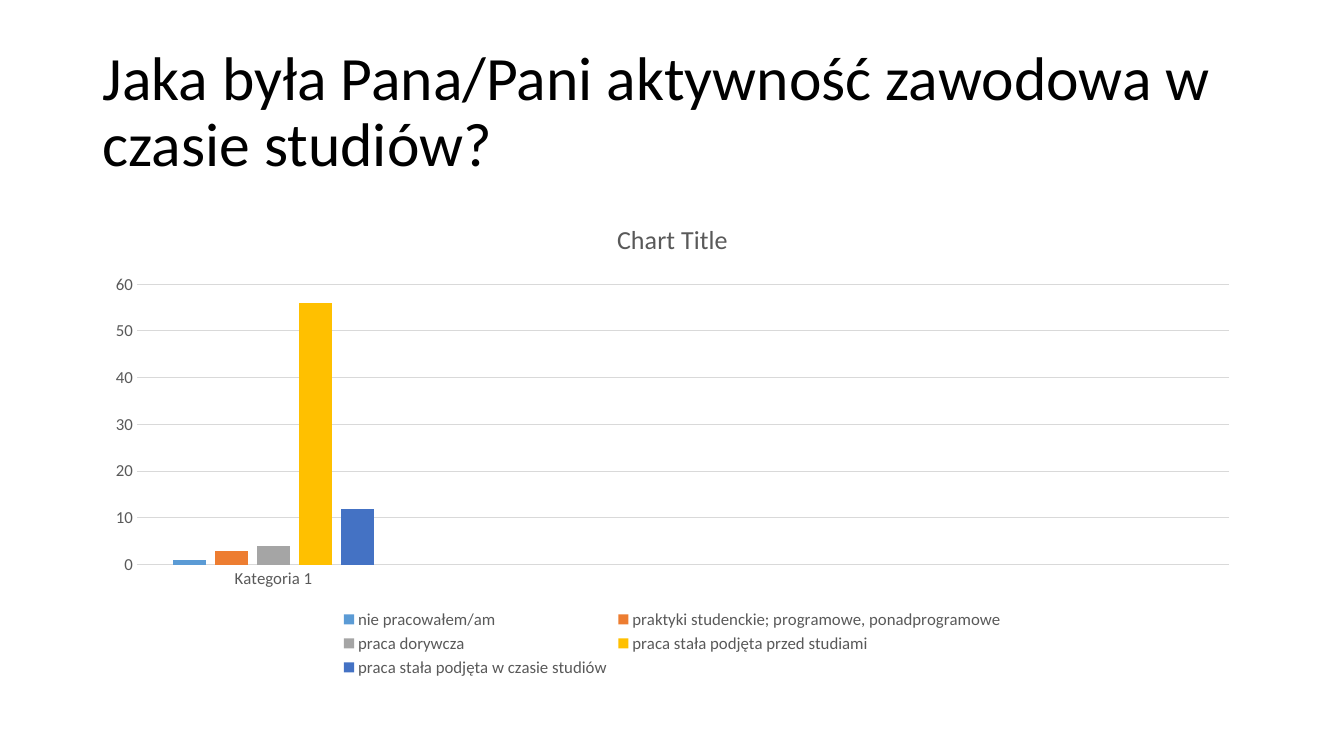
from pptx import Presentation
from pptx.chart.data import CategoryChartData
from pptx.dml.color import RGBColor
from pptx.enum import chart as charts, text
from pptx.util import Inches, Pt

FONT = "Calibri"
GREY, RULE = "595959", "D9D9D9"
CATEGORIES = ["Kategoria 1", "", "", ""]
ANSWERS = [
    ("nie pracowałem/am", 1, "5B9BD5"),
    ("praktyki studenckie; programowe, ponadprogramowe", 3, "ED7D31"),
    ("praca dorywcza", 4, "A5A5A5"),
    ("praca stała podjęta przed studiami", 56, "FFC000"),
    ("praca stała podjęta w czasie studiów", 12, "4472C4"),
]


def color(hex_string):
    return RGBColor.from_string(hex_string)


def style(font, size, hex_string):
    font.name = FONT
    font.size = Pt(size)
    font.bold = False
    font.color.rgb = color(hex_string)


def rule(line):
    line.color.rgb = color(RULE)
    line.width = Pt(0.75)


def add_question(slide, left, top, width, height):
    question = slide.shapes.add_textbox(
        Inches(left), Inches(top), Inches(width), Inches(height))
    frame = question.text_frame
    frame.word_wrap = True
    frame.vertical_anchor = text.MSO_ANCHOR.MIDDLE
    frame.text = "Jaka była Pana/Pani aktywność zawodowa w czasie studiów?"
    paragraph = frame.paragraphs[0]
    paragraph.line_spacing = 0.9
    style(paragraph.runs[0].font, 44, "000000")


def add_answers(slide, left, top, width, height):
    data = CategoryChartData()
    data.categories = CATEGORIES
    for name, count, _ in ANSWERS:
        data.add_series(name, [count] + [None] * (len(CATEGORIES) - 1))
    chart = slide.shapes.add_chart(
        charts.XL_CHART_TYPE.COLUMN_CLUSTERED,
        Inches(left), Inches(top), Inches(width), Inches(height), data).chart
    style(chart.font, 10, "000000")

    chart.has_title = True
    heading = chart.chart_title.text_frame
    heading.text = "Chart Title"
    style(heading.paragraphs[0].runs[0].font, 18.6, GREY)
    chart.chart_title.include_in_layout = False

    columns = chart.plots[0]
    columns.vary_by_categories = False
    columns.gap_width = 219
    columns.overlap = -27
    for series, (_, _, fill) in zip(columns.series, ANSWERS):
        series.format.fill.solid()
        series.format.fill.fore_color.rgb = color(fill)
        series.invert_if_negative = False

    for axis in (chart.category_axis, chart.value_axis):
        axis.major_tick_mark = charts.XL_TICK_MARK.NONE
        axis.minor_tick_mark = charts.XL_TICK_MARK.NONE
        style(axis.tick_labels.font, 12, GREY)
    rule(chart.category_axis.format.line)
    chart.value_axis.format.line.fill.background()
    rule(chart.value_axis.major_gridlines.format.line)

    chart.has_legend = True
    chart.legend.position = charts.XL_LEGEND_POSITION.BOTTOM
    chart.legend.include_in_layout = False
    style(chart.legend.font, 12, GREY)


def main():
    deck = Presentation()
    deck.slide_width, deck.slide_height = Inches(13.33), Inches(7.5)
    slide = deck.slides.add_slide(deck.slide_layouts[6])
    add_question(slide, 0.92, 0.4, 11.5, 1.45)
    add_answers(slide, 0.92, 2, 11.5, 4.76)
    deck.save("out.pptx")


if __name__ == "__main__":
    main()
